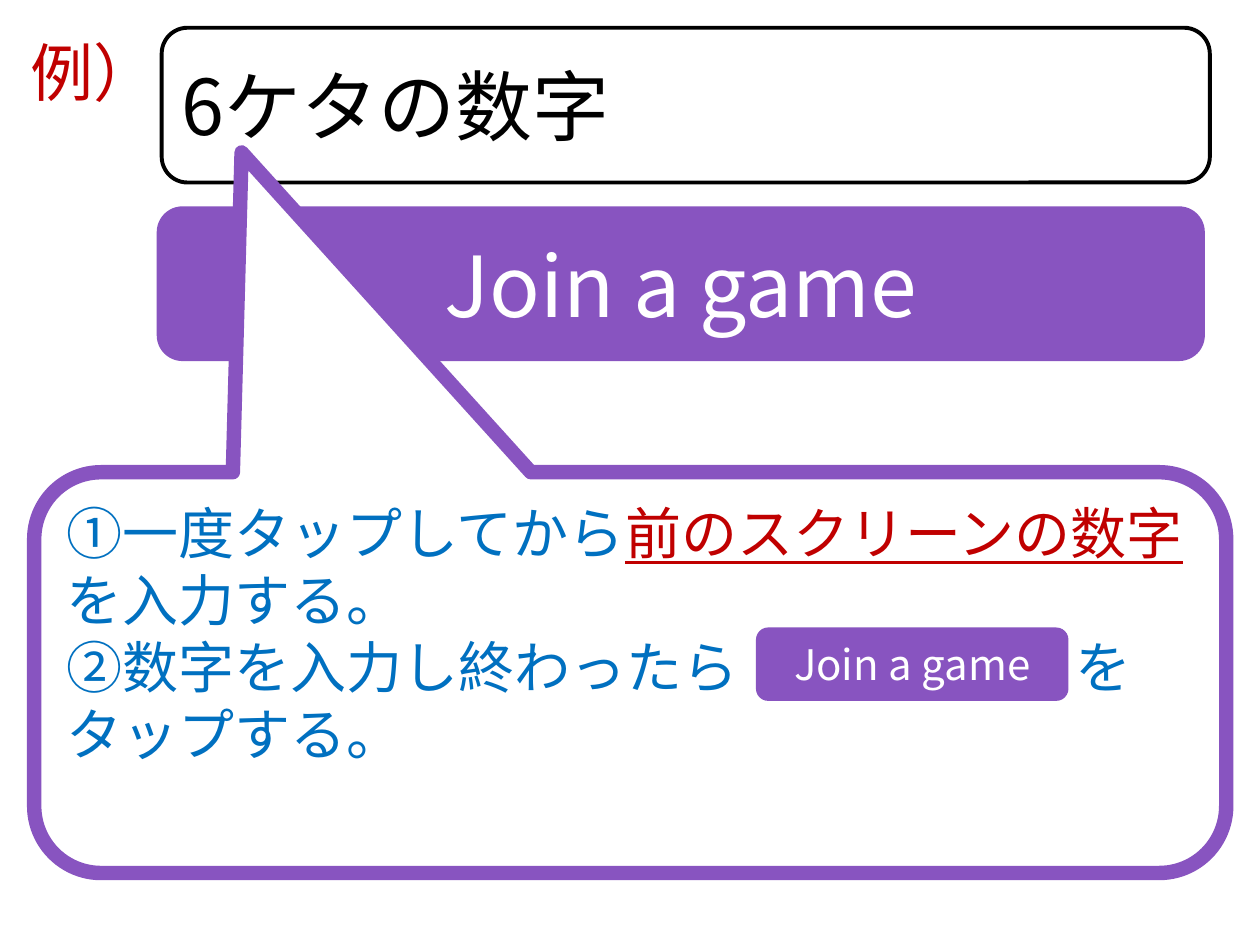
from pptx import Presentation
from pptx.dml.color import RGBColor
from pptx.enum.shapes import MSO_SHAPE as Preset
from pptx.enum.text import MSO_ANCHOR as Anchor, PP_ALIGN as Align
from pptx.oxml.ns import qn
from pptx.util import Cm, Pt
from lxml.etree import SubElement

COLORS = {"purple": "8854C0", "white": "FFFFFF", "black": "000000",
          "red": "C00000", "blue": "0070C0"}
JAPANESE = "Noto Sans CJK JP"
BUTTON_TEXT = "Join a game"


def color(name):
    """Return the named colour of the palette."""
    return RGBColor.from_string(COLORS[name])


def add_run(paragraph, text, size, tint, underline=None, latin=JAPANESE):
    """Append one formatted run to a paragraph."""
    run = paragraph.add_run()
    run.text = text
    font = run.font
    font.size, font.name, font.underline = Pt(size), latin, underline
    font.color.rgb = color(tint)
    SubElement(font._element, qn("a:ea"), typeface=JAPANESE)


def add_panel(slide, preset, box, fill, line=None, width=0, anchor=Anchor.MIDDLE):
    """Add a flat filled shape and return it."""
    panel = slide.shapes.add_shape(preset, *map(Cm, box))
    panel.shadow.inherit = False
    panel.fill.solid()
    panel.fill.fore_color.rgb = color(fill)
    if line:
        panel.line.color.rgb = color(line)
        panel.line.width = Pt(width)
    else:
        panel.line.fill.background()
    panel.text_frame.word_wrap = True
    panel.text_frame.vertical_anchor = anchor
    panel.text_frame.paragraphs[0].alignment = Align.LEFT
    return panel


def add_button(slide, box, size):
    """Draw the purple join button in the given box."""
    button = add_panel(slide, Preset.ROUNDED_RECTANGLE, box, "purple")
    label = button.text_frame.paragraphs[0]
    label.alignment = Align.CENTER
    add_run(label, BUTTON_TEXT, size, "white")


def add_example_form(slide, left, top):
    """Draw the example mark, the number field and the join button."""
    mark = slide.shapes.add_textbox(Cm(left), Cm(top), Cm(3.3), Cm(1.8))
    mark.text_frame.word_wrap = True
    add_run(mark.text_frame.paragraphs[0], "例）", 36, "red", latin="Calibri")

    field = add_panel(slide, Preset.ROUNDED_RECTANGLE,
                      (left + 2.9, top, 21.13, 3.12), "white", "black", 2.25)
    add_run(field.text_frame.paragraphs[0], "6ケタの数字", 44, "black")
    add_button(slide, (left + 2.8, top + 3.6, 21.13, 3.12), 48)


def add_instructions(slide, left, top, width, height):
    """Draw the callout with the two steps and its inline button."""
    callout = add_panel(slide, Preset.ROUNDED_RECTANGULAR_CALLOUT,
                        (left, top, width, height), "white", "purple", 8.25, Anchor.TOP)
    for index, value in enumerate((-0.326, -1.298, 0.167)):
        callout.adjustments[index] = value

    enter = callout.text_frame.paragraphs[0]
    add_run(enter, "①一度タップしてから", 32, "blue")
    add_run(enter, "前のスクリーンの数字", 32, "red", underline=True)
    add_run(enter, "を入力する。", 32, "blue")

    tap = callout.text_frame.add_paragraph()
    tap.alignment = Align.LEFT
    stops = SubElement(tap._p.get_or_add_pPr(), qn("a:tabLst"))
    SubElement(stops, qn("a:tab"), pos=str(Cm(20.35)), algn="l")
    add_run(tap, "②数字を入力し終わったら\tをタップする。", 32, "blue")
    add_button(slide, (left + 14.55, top + 3.13, 6.3, 1.48), 24)


def main():
    """Build and save the slide."""
    deck = Presentation()
    deck.slide_width, deck.slide_height = Cm(25.4), Cm(19.05)
    slide = deck.slides.add_slide(deck.slide_layouts[6])
    add_example_form(slide, 0.36, 0.56)
    add_instructions(slide, 0.69, 9.52, 24.03, 8.08)
    deck.save("out.pptx")


if __name__ == "__main__":
    main()
